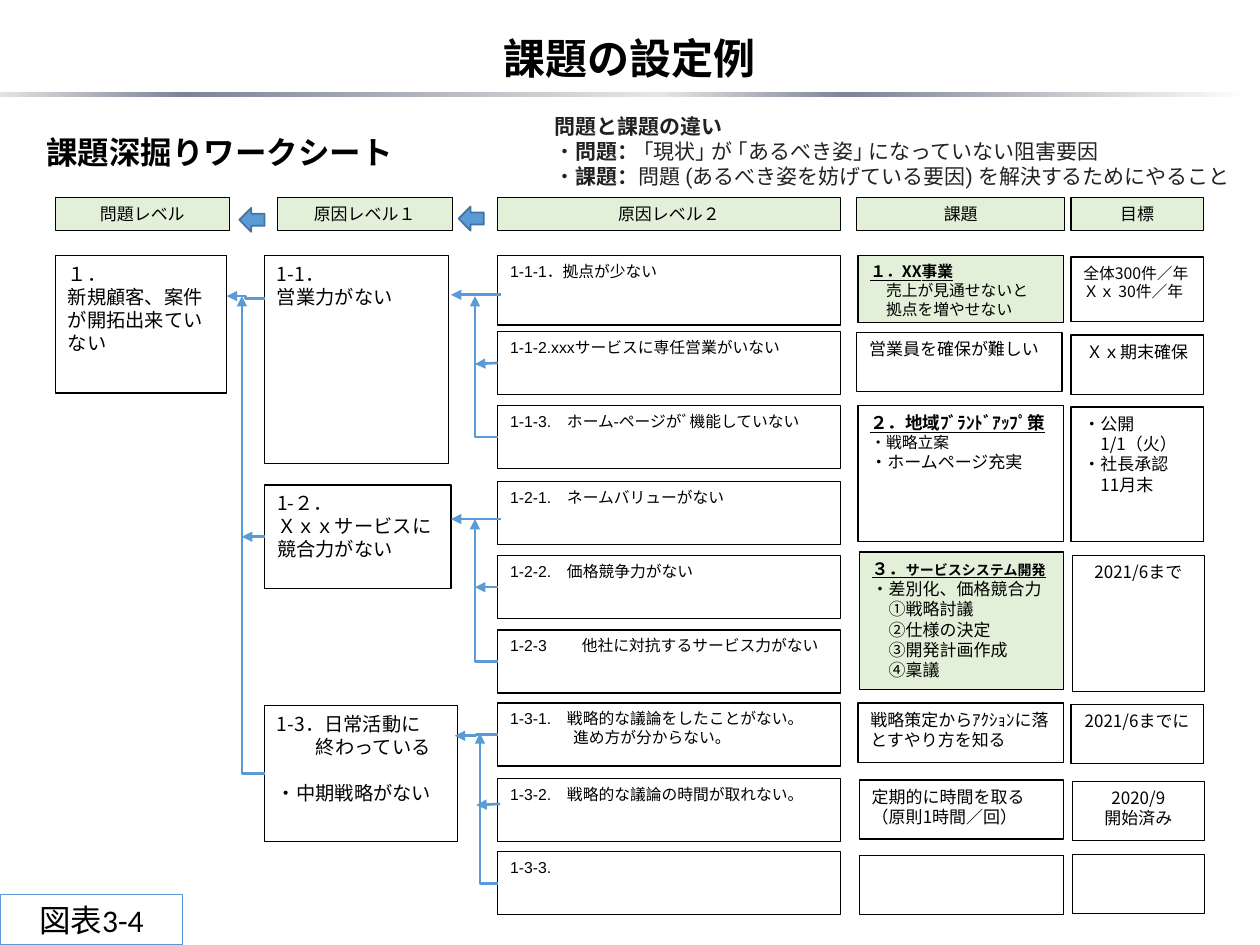
"""Builds the issue-setting worksheet slide: problems, causes, issues and goals."""
from lxml import etree
from pptx import Presentation
from pptx.dml import color
from pptx.enum import shapes, text
from pptx.oxml import ns
from pptx.util import Inches, Pt

COLORS = {"ink": "000000", "note": "222222", "green": "E2F0D9", "blue": "5B9BD5",
          "edge": "43739E", "white": "FFFFFF", "pale": "E6E6E6", "slate": "7D8496"}
SANS = "Noto Sans CJK JP"
CENTER = text.PP_ALIGN.CENTER
MIDDLE = text.MSO_ANCHOR.MIDDLE
STRAIGHT, STEP = shapes.MSO_CONNECTOR.STRAIGHT, shapes.MSO_CONNECTOR.ELBOW
CORNER = "bentConnector2"
HEADING = {"bold": True, "underline": True}

HEADERS = [("問題レベル", 0.44, 1.38), ("原因レベル１", 2.2, 1.39), ("原因レベル２", 3.95, 2.72),
           ("課題", 6.8, 1.65), ("目標", 8.5, 1.05)]

LEVELS = {
    "1": ((0.44, 2.03, 1.36, 1.09), ["１．", "新規顧客、案件が開拓出来ていない"]),
    "1-1": ((2.1, 2.03, 1.46, 1.65), ["1-1．", "営業力がない"]),
    "1-2": ((2.1, 3.85, 1.48, 0.82), ["1-２．", "Ｘｘｘサービスに競合力がない"]),
    "1-3": ((2.1, 5.6, 1.53, 1.08),
            ["1-3．日常活動に", {"text": "終わっている", "left": 0.31},
             {"text": "・中期戦略がない", "before": 13.2}]),
}

CAUSES = {
    "1-1-1": (2.03, 0.55, ["1-1-1．拠点が少ない"]),
    "1-1-2": (2.63, 0.5, ["1-1-2.xxxサービスに専任営業がいない"]),
    "1-1-3": (3.22, 0.5, ["1-1-3.　ホーム-ページがﾞ機能していない"]),
    "1-2-1": (3.82, 0.5, ["1-2-1.　ネームバリューがない"]),
    "1-2-2": (4.41, 0.5, ["1-2-2.　価格競争力がない"]),
    "1-2-3": (5, 0.5, [{"text": "1-2-3\t他社に対抗するサービス力がない",
                        "left": 0.57, "first": -0.57}]),
    "1-3-1": (5.58, 0.5, ["1-3-1.　戦略的な議論をしたことがない。",
                          {"text": "進め方が分からない。", "left": 0.5}]),
    "1-3-2": (6.18, 0.5, ["1-3-2.　戦略的な議論の時間が取れない。"]),
    "1-3-3": (6.76, 0.5, ["1-3-3."]),
}

ISSUES = [
    ((6.81, 2.03, 1.63, 0.53), 9, "green",
     [[("１．XX事業", HEADING)], "　売上が見通せないと", "　拠点を増やせない"]),
    ((6.8, 2.64, 1.63, 0.47), 9.7, None, ["営業員を確保が難しい"]),
    ((6.81, 3.22, 1.63, 1.08), 9.7, None,
     [[("２．地域ﾌﾞﾗﾝﾄﾞｱｯﾌﾟ策", {**HEADING, "size": Pt(10)})],
      [("・戦略立案", {"size": Pt(9)})], "・ホームページ充実"]),
    ((6.82, 4.38, 1.62, 1.09), 9.7, "green",
     [[("３．", HEADING), ("サービスシステム開発", {**HEADING, "size": Pt(8)})],
      "・差別化、価格競合力", "　①戦略討議", "　②仕様の決定", "　③開発計画作成", "　④稟議"]),
    ((6.81, 5.58, 1.63, 0.47), 9.7, None, ["戦略策定からｱｸｼｮﾝに落とすやり方を知る"]),
    ((6.82, 6.19, 1.62, 0.47), 9.7, None, ["定期的に時間を取る", "（原則1時間／回）"]),
    ((6.82, 6.79, 1.62, 0.47), 9.7, None, []),
]

GOALS = [
    ((8.5, 2.04, 1.05, 0.51), 9, None, ["全体300件／年", "Ｘｘ 30件／年"]),
    ((8.5, 2.66, 1.05, 0.47), 9.7, CENTER, ["Ｘｘ期末確保"]),
    ((8.5, 3.23, 1.05, 1.07), 9.7, None, ["・公開", "　1/1（火）", "・社長承認", "　11月末"]),
    ((8.51, 4.41, 1.05, 1.08), 9.7, CENTER, ["2021/6まで"]),
    ((8.5, 5.59, 1.05, 0.47), 9.7, CENTER, ["2021/6までに"]),
    ((8.51, 6.2, 1.05, 0.47), 9.7, CENTER, ["2020/9", "開始済み"]),
    ((8.51, 6.78, 1.05, 0.47), 9.7, CENTER, []),
]

ARROWS = [
    (STEP, (2.1, 2.37), (1.8, 2.35)), (STEP, (3.98, 2.34), (3.58, 2.34)),
    (STEP, (3.98, 4.12), (3.58, 4.12)), (STEP, "1-3-1", (3.61, 5.84)),
    (CORNER, "1-1-3", (3.77, 2.35)), (STRAIGHT, "1-1-2", (3.77, 2.89)),
    (CORNER, "1-2-3", (3.77, 4.12)), (STRAIGHT, "1-2-2", (3.77, 4.66)),
    (CORNER, "1-3-3", (3.81, 5.82)), (STRAIGHT, (3.97, 6.38), (3.78, 6.39)),
    (CORNER, "1-3", (1.92, 2.35)), (STRAIGHT, "1-2", (1.92, 4.26)),
]

BAR_STOPS = [(0, "pale"), (15, "slate"), (53, "pale"), (68, "slate"), (93, "pale"), (100, "white")]


def rgb(name):
    """Returns the named colour."""
    return color.RGBColor.from_string(COLORS[name])


def style(font, size, name, ink, bold, asian):
    """Sets size, typefaces, colour and weight of a font."""
    font.size, font.name, font.bold = Pt(size), name, bold
    font.color.rgb = rgb(ink)
    etree.SubElement(font._rPr, ns.qn("a:ea")).set("typeface", asian)


def write(shape, lines, size, name=SANS, ink="ink", bold=False, align=None,
          anchor=text.MSO_ANCHOR.TOP, asian=SANS, right=0.1):
    """Writes lines, each a string, a list of runs or a dict with indents."""
    frame = shape.text_frame
    frame.word_wrap, frame.vertical_anchor = True, anchor
    frame.margin_right = Inches(right)
    for number, line in enumerate(lines):
        paragraph = frame.add_paragraph() if number else frame.paragraphs[0]
        paragraph.alignment = align or text.PP_ALIGN.LEFT
        layout = line if isinstance(line, dict) else {"text": line}
        if "left" in layout:
            properties = paragraph._p.get_or_add_pPr()
            properties.set("marL", str(Inches(layout["left"])))
            properties.set("indent", str(Inches(layout.get("first", 0))))
        if "before" in layout:
            paragraph.space_before = Pt(layout["before"])
        style(paragraph.font, size, name, ink, bold, asian)
        content = layout["text"]
        for words, changes in [(content, {})] if isinstance(content, str) else content:
            run = paragraph.add_run()
            run.text = words
            for key, value in changes.items():
                setattr(run.font, key, value)


def block(slide, area, fill=None, edge="ink", width=0.75, kind=shapes.MSO_SHAPE.RECTANGLE):
    """Adds an outlined shape."""
    shape = slide.shapes.add_shape(kind, *map(Inches, area))
    shape.shadow.inherit = False
    if fill:
        shape.fill.solid()
        shape.fill.fore_color.rgb = rgb(fill)
    else:
        shape.fill.background()
    shape.line.color.rgb, shape.line.width = rgb(edge), Pt(width)
    return shape


def label(slide, area, lines, size, **look):
    """Adds a text box."""
    write(slide.shapes.add_textbox(*map(Inches, area)), lines, size, **look)


def arrow(slide, kind, start, end, boxes):
    """Adds an arrow from a point or from the left side of a named box."""
    connector = slide.shapes.add_connector(
        STEP if kind == CORNER else kind,
        *map(Inches, (*(end if isinstance(start, str) else start), *end)))
    if isinstance(start, str):
        connector.begin_connect(boxes[start], 1)
    properties = connector._element.spPr
    if kind == CORNER:
        properties.find(ns.qn("a:prstGeom")).set("prst", CORNER)
    connector.line.color.rgb, connector.line.width = rgb("blue"), Pt(1.5)
    etree.SubElement(connector.line._get_or_add_ln(), ns.qn("a:tailEnd")).set("type", "triangle")
    etree.SubElement(properties, ns.qn("a:effectLst"))


def gradient_bar(slide, area):
    """Adds the shaded rule below the title."""
    bar = block(slide, area)
    bar.line.fill.background()
    bar.fill.gradient()
    bar.fill.gradient_angle = 0
    stops = bar._element.spPr.find(".//" + ns.qn("a:gsLst"))
    for stop in list(stops):
        stops.remove(stop)
    for percent, name in BAR_STOPS:
        stop = etree.SubElement(stops, ns.qn("a:gs"), pos=str(percent * 1000))
        etree.SubElement(stop, ns.qn("a:srgbClr"), val=COLORS[name])


def main():
    """Builds and saves the slide."""
    deck = Presentation()
    deck.slide_width, deck.slide_height = Inches(10), Inches(7.5)
    slide = deck.slides.add_slide(deck.slide_layouts[6])

    label(slide, (0, 0.21, 10, 0.5), ["課題の設定例"], 24, bold=True, align=CENTER, anchor=MIDDLE)
    gradient_bar(slide, (-0.05, 0.73, 9.96, 0.04))
    label(slide, (0.27, 1.01, 9.45, 0.4), ["課題深掘りワークシート"], 18, bold=True, anchor=MIDDLE)
    strong = {"bold": True}
    label(slide, (4.3, 0.85, 5.65, 0.71),
          [[("問題と課題の違い", strong)],
           [("・", {}), ("問題：\u00a0", strong), ("｢現状｣ が ｢あるべき姿｣ になっていない阻害要因", {})],
           [("・", {}), ("課題：", strong),
            ("問題 (あるべき姿を妨げている要因) を解決するためにやること", {})]],
          12, name="Roboto", ink="note", asian="Roboto", right=0)

    for title, left, width in HEADERS:
        write(block(slide, (left, 1.57, width, 0.26), "green"), [title], 9.7,
              align=CENTER, anchor=MIDDLE)
    for left, top in [(1.9, 1.65), (3.64, 1.64)]:
        block(slide, (left, top, 0.2, 0.19), "blue", "edge", 1, shapes.MSO_SHAPE.LEFT_ARROW)

    boxes = {}
    for key, (area, lines) in LEVELS.items():
        boxes[key] = block(slide, area)
        write(boxes[key], lines, 11)
    for key, (top, height, lines) in CAUSES.items():
        boxes[key] = block(slide, (3.95, top, 2.72, height))
        write(boxes[key], lines, 9, name="Arial")
    for area, size, fill, lines in ISSUES:
        write(block(slide, area, fill), lines, size)
    for area, size, align, lines in GOALS:
        write(block(slide, area), lines, size, align=align)
    for kind, start, end in ARROWS:
        arrow(slide, kind, start, end, boxes)

    write(block(slide, (0, 7.1, 1.45, 0.4), edge="blue"), ["図表3-4"], 18,
          name="Calibri", align=CENTER, anchor=MIDDLE)
    deck.save("out.pptx")


if __name__ == "__main__":
    main()
